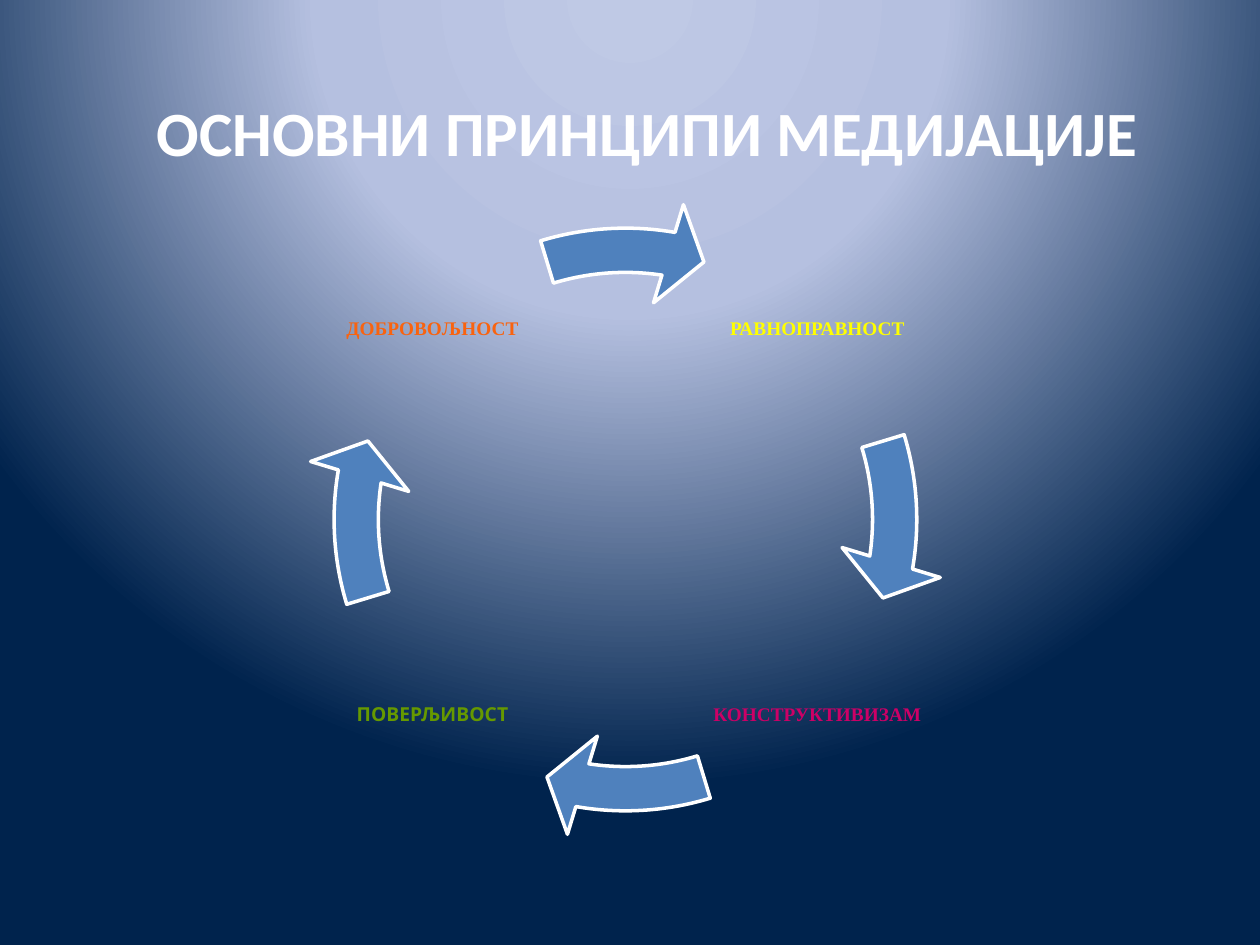
import pptx
import pptx.dml.color
import pptx.enum.shapes
import pptx.enum.text
import pptx.oxml
import pptx.oxml.ns
import pptx.util

EMU_PER_PX = 914400 // 126
WHITE = "FFFFFF"
BLUE = "4F81BD"
GRADIENT_STOPS = [(0, "BFC9E5"), (40, "B5C0E0"), (100, "00234D")]
LEFT, RIGHT, TOP, BOTTOM = 319, 704, 214, 600
LABEL_SIZE = 227
RING = (305, 199, 641, 641)
# Arrow angles are in units of 100000/60000 degrees
FULL_TURN = 216
QUARTER_TURN = 54
# Clockwise from the top right
PRINCIPLES = [
    ("РАВНОПРАВНОСТ", RIGHT, TOP, "Times New Roman", "FFFF00"),
    ("КОНСТРУКТИВИЗАМ", RIGHT, BOTTOM, "Times New Roman", "CC0066"),
    ("ПОВЕРЉИВОСТ", LEFT, BOTTOM, "Cabin", "669900"),
    ("ДОБРОВОЉНОСТ", LEFT, TOP, "Times New Roman", "F9630F"),
]


def px(length):
    return pptx.util.Emu(length * EMU_PER_PX)


def color(value):
    return pptx.dml.color.RGBColor.from_string(value)


def set_background(page):
    """Fill the page with a round gradient centred above its top edge."""
    stops = "".join(
        f'<a:gs pos="{place * 1000}"><a:srgbClr val="{value}"/></a:gs>'
        for place, value in GRADIENT_STOPS
    )
    background = pptx.oxml.parse_xml(
        f'<p:bg {pptx.oxml.ns.nsdecls("p", "a")}><p:bgPr>'
        f'<a:gradFill rotWithShape="1"><a:gsLst>{stops}</a:gsLst>'
        '<a:path path="circle">'
        '<a:fillToRect l="50000" t="-80000" r="50000" b="180000"/>'
        "</a:path></a:gradFill><a:effectLst/></p:bgPr></p:bg>"
    )
    page.element.cSld.insert(0, background)


def add_text(page, text, place, insets, font):
    box = page.shapes.add_textbox(*map(px, place))
    frame = box.text_frame
    frame.word_wrap = True
    frame.vertical_anchor = pptx.enum.text.MSO_ANCHOR.MIDDLE
    for side, inset in zip(("left", "top", "right", "bottom"), insets):
        setattr(frame, f"margin_{side}", px(inset))
    para = frame.paragraphs[0]
    para.alignment = pptx.enum.text.PP_ALIGN.CENTER
    span = para.add_run()
    span.text = text
    span.font.color.rgb = color(font["color"])
    for name in ("name", "size", "bold"):
        setattr(span.font, name, font[name])


def add_ring_arrow(page, quarter):
    """Add the arrow that leaves the given quarter of the ring."""
    arrow = page.shapes.add_shape(
        pptx.enum.shapes.MSO_SHAPE.CIRCULAR_ARROW, *map(px, RING)
    )
    arrow.shadow.inherit = False
    arrow.fill.solid()
    arrow.fill.fore_color.rgb = color(BLUE)
    arrow.line.color.rgb = color(WHITE)
    arrow.line.width = pptx.util.Pt(2)
    turn = quarter * QUARTER_TURN
    end = 5.52 + turn
    start = (205.84 + turn) % FULL_TURN
    for index, value in enumerate((0.069, 4.65, end, start, 0.08)):
        arrow.adjustments[index] = value


def main():
    deck = pptx.Presentation()
    deck.slide_width, deck.slide_height = px(1260), px(945)
    page = deck.slides.add_slide(deck.slide_layouts[6])
    set_background(page)
    title_font = {"name": "Calibri", "size": pptx.util.Pt(36),
                  "bold": True, "color": WHITE}
    add_text(page, "ОСНОВНИ ПРИНЦИПИ МЕДИЈАЦИЈЕ", (42, 53, 1176, 147),
             (48, 16, 13, 6), title_font)
    for quarter, (text, left, top, name, value) in enumerate(PRINCIPLES):
        font = {"name": name, "size": pptx.util.Pt(11),
                "bold": True, "color": value}
        add_text(page, text, (left, top, LABEL_SIZE, LABEL_SIZE),
                 (2, 2, 2, 2), font)
        add_ring_arrow(page, quarter)
    deck.save("out.pptx")


if __name__ == "__main__":
    main()
